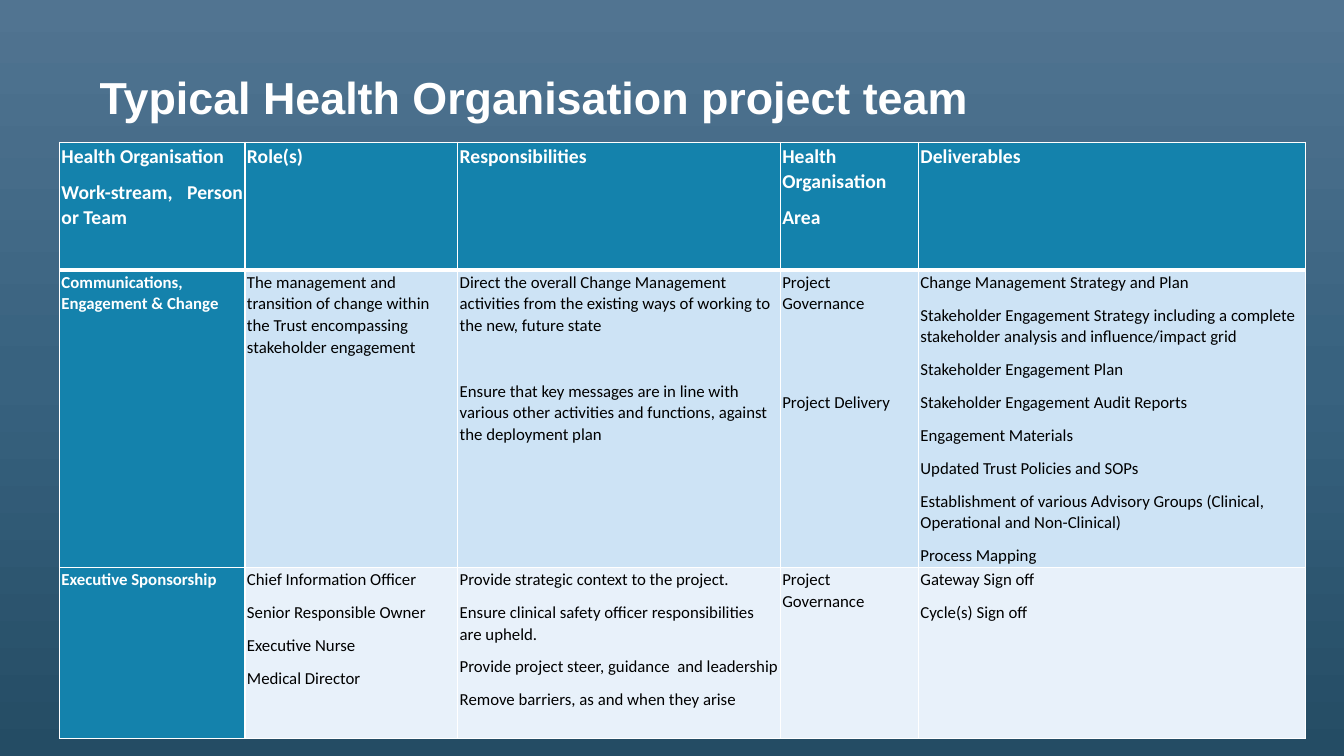
import copy
from dataclasses import dataclass

import lxml.etree
import pptx
import pptx.dml.color
import pptx.enum.text
import pptx.oxml.ns
import pptx.util

Inches = pptx.util.Inches
Pt = pptx.util.Pt
Align = pptx.enum.text.PP_ALIGN
Anchor = pptx.enum.text.MSO_ANCHOR


@dataclass(frozen=True)
class Theme:
    background: tuple = ("517491", "38627F", "244C64")
    white: str = "FFFFFF"
    black: str = "000000"
    header: str = "1482AC"
    bands: tuple = ("CDE3F5", "E8F1FA")
    title_font: str = "Arial"
    table_font: str = "Calibri"
    title_size: float = 32
    header_size: float = 14
    body_size: float = 12
    thin: float = 1
    thick: float = 3


@dataclass(frozen=True)
class Para:
    """A paragraph with extra space above it, in points."""
    text: str
    before: float = 0


@dataclass(frozen=True)
class TeamRow:
    """One table row: its height and the paragraphs of each cell."""
    height: float
    cells: tuple


THEME = Theme()
LINE_GAP = 23.5  # one body line with its paragraph spacing
COLUMN_WIDTHS = (1.84, 2.11, 3.2, 1.37, 3.84)

ROWS = (
    TeamRow(1.27, (
        ("Health Organisation", "Work-stream, Person or Team"),
        ("Role(s)",),
        ("Responsibilities",),
        ("Health Organisation", "Area"),
        ("Deliverables",),
    )),
    TeamRow(2.95, (
        ("Communications, Engagement & Change",),
        ("The management and transition of change within the Trust "
         "encompassing stakeholder engagement",),
        ("Direct the overall Change Management activities from the existing "
         "ways of working to the new, future state",
         Para("Ensure that key messages are in line with various other activities "
              "and functions, against the deployment plan", LINE_GAP)),
        ("Project Governance", Para("Project Delivery", 2 * LINE_GAP)),
        ("Change Management Strategy and Plan",
         "Stakeholder Engagement Strategy including a complete stakeholder "
         "analysis and influence/impact grid",
         "Stakeholder Engagement Plan",
         "Stakeholder Engagement Audit Reports",
         "Engagement Materials",
         "Updated Trust Policies and SOPs",
         "Establishment of various Advisory Groups (Clinical, Operational "
         "and Non-Clinical)",
         "Process Mapping"),
    )),
    TeamRow(1.7, (
        ("Executive Sponsorship",),
        ("Chief Information Officer", "Senior Responsible Owner",
         "Executive Nurse", "Medical Director"),
        ("Provide strategic context to the project.",
         "Ensure clinical safety officer responsibilities are upheld.",
         "Provide project steer, guidance  and leadership",
         "Remove barriers, as and when they arise"),
        ("Project Governance",),
        ("Gateway Sign off", "Cycle(s) Sign off"),
    )),
)


def rgb(color: str) -> pptx.dml.color.RGBColor:
    return pptx.dml.color.RGBColor.from_string(color)


def write(tf, paras: tuple, *, font: str, size: float, color: str, bold: bool = False,
          align=Align.LEFT, spacing: float = 1.06, after: float = 8) -> None:
    """Fill a text frame with formatted paragraphs."""
    tf.word_wrap = True
    for i, item in enumerate(paras):
        para = item if isinstance(item, Para) else Para(item)
        p = tf.paragraphs[0] if i == 0 else tf.add_paragraph()
        p.alignment = align
        p.line_spacing = spacing
        p.space_before = Pt(para.before)
        p.space_after = Pt(after)
        r = p.add_run()
        r.text = para.text
        r.font.name = font
        r.font.size = Pt(size)
        r.font.bold = bold
        r.font.color.rgb = rgb(color)


def set_borders(cell, widths: dict) -> None:
    """Draw solid white borders; widths maps L, R, T, B to points."""
    qn = pptx.oxml.ns.qn
    tc_pr = cell._tc.get_or_add_tcPr()
    for side, width in widths.items():
        ln = lxml.etree.SubElement(tc_pr, qn(f"a:ln{side}"), w=str(Pt(width)))
        fill = lxml.etree.SubElement(ln, qn("a:solidFill"))
        lxml.etree.SubElement(fill, qn("a:srgbClr"), val=THEME.white)


def paint_background(s) -> None:
    """Three-stop gradient running from top to bottom."""
    fill = s.background.fill
    fill.gradient()
    fill.gradient_angle = 270
    stops = s.element.xpath(".//a:gsLst")[0]
    stops.append(copy.deepcopy(stops[0]))
    for i, (stop, color) in enumerate(zip(fill.gradient_stops, THEME.background)):
        stop.position = i / 2
        stop.color.rgb = rgb(color)


def add_title(s) -> None:
    sp = s.shapes.add_textbox(Inches(0.89), Inches(0.67), Inches(11.74), Inches(0.64))
    sp.text_frame.vertical_anchor = Anchor.MIDDLE
    write(sp.text_frame, ("Typical Health Organisation project team",),
          font=THEME.title_font, size=THEME.title_size, color=THEME.white,
          bold=True, spacing=0.9, after=0)


def format_cell(cell, paras: tuple, row: int, col: int) -> None:
    is_header, is_label = row == 0, row == 0 or col == 0
    cell.margin_left = cell.margin_right = Inches(0.02)
    cell.margin_top, cell.margin_bottom = Inches(0.01), 0
    set_borders(cell, {
        "L": THEME.thin,
        "R": THEME.thin,
        "T": THEME.thick if row == 1 else THEME.thin,
        "B": THEME.thick if is_header else THEME.thin,
    })
    cell.fill.solid()
    cell.fill.fore_color.rgb = rgb(THEME.header if is_label else THEME.bands[row - 1])
    write(cell.text_frame, paras, font=THEME.table_font,
          size=THEME.header_size if is_header else THEME.body_size,
          color=THEME.white if is_label else THEME.black, bold=is_label,
          align=Align.JUSTIFY if is_header else Align.LEFT)


def add_team_table(s) -> None:
    frame = s.shapes.add_table(
        len(ROWS), len(COLUMN_WIDTHS), Inches(0.59), Inches(1.41),
        Inches(sum(COLUMN_WIDTHS)), Inches(sum(row.height for row in ROWS)))
    table = frame.table
    table.horz_banding = False
    for column, width in zip(table.columns, COLUMN_WIDTHS):
        column.width = Inches(width)
    for i, row in enumerate(ROWS):
        table.rows[i].height = Inches(row.height)
        for j, paras in enumerate(row.cells):
            format_cell(table.cell(i, j), paras, i, j)


def main() -> None:
    prs = pptx.Presentation()
    prs.slide_width, prs.slide_height = Inches(13.33), Inches(7.5)
    s = prs.slides.add_slide(prs.slide_layouts[6])
    paint_background(s)
    add_title(s)
    add_team_table(s)
    prs.save("out.pptx")


if __name__ == "__main__":
    main()
